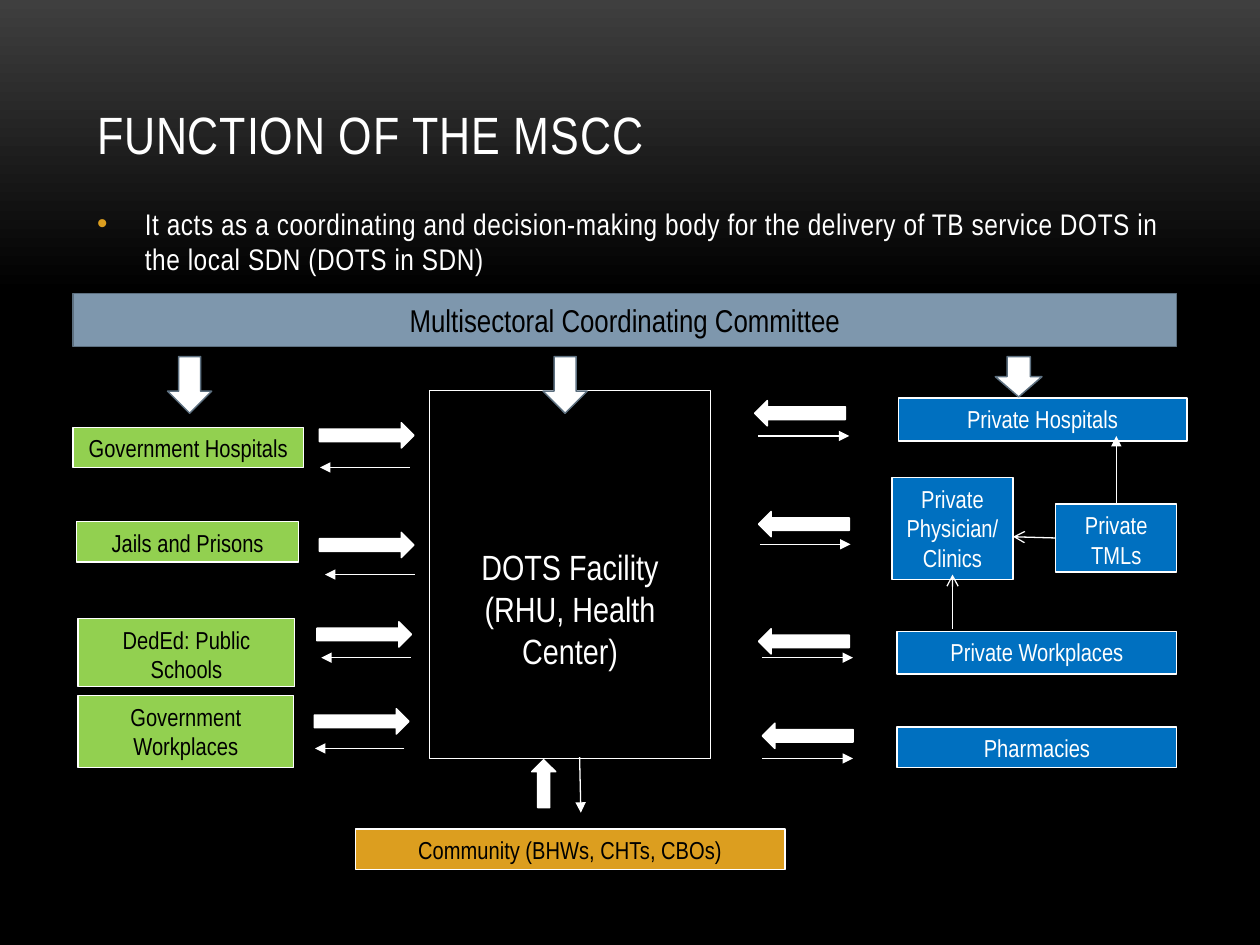
from copy import deepcopy

from lxml import etree
from pptx import Presentation
from pptx import util as u
from pptx.dml import color
from pptx.enum import shapes, text
from pptx.oxml import ns

COLS, ROWS = 100, 75
WIDE, HIGH = u.Inches(10), u.Inches(7.5)
FONT = "Arial Narrow"
WHITE, BLACK, GOLD = "FFFFFF", "000000", "DC9E1F"
GREEN, BLUE, STEEL, EDGE = "92D050", "0070C0", "7E97AD", "5D7080"
FORM = shapes.MSO_SHAPE


def rgb(code):
    """Turn a hex string into a colour."""
    return color.RGBColor.from_string(code)


def spot(box, x, y):
    """Turn a grid point within a box into slide lengths."""
    return round((box[0] + x) * WIDE / COLS), round((box[1] + y) * HIGH / ROWS)


def span(w, h):
    """Turn columns and rows into a width and a height."""
    return spot((0, 0), w, h)


def style(frame, size, tone, gap=None):
    """Format every run of a text frame."""
    for para in frame.paragraphs:
        for run in para.runs:
            run.font.size, run.font.name = u.Pt(size), FONT
            run.font.color.rgb = rgb(tone)
            if gap:
                run.font._element.set("spc", str(gap))


def form(slide, kind, box, part, fill, edge=WHITE, thick=0.85):
    """Draw a preset shape at a grid part of a box."""
    shape = slide.shapes.add_shape(kind, *spot(box, *part[:2]), *span(*part[2:]))
    shape.shadow.inherit = False
    if fill:
        shape.fill.solid()
        shape.fill.fore_color.rgb = rgb(fill)
    else:
        shape.fill.background()
    shape.line.color.rgb = rgb(edge)
    shape.line.width = u.Pt(thick)
    return shape


def label(slide, box, part, words, fill, tone, size=14, **look):
    """Draw a rectangle with centred words."""
    shape = form(slide, FORM.RECTANGLE, box, part, fill, **{"thick": 0.75, **look})
    frame = shape.text_frame
    frame.text, frame.word_wrap = words, True
    frame.vertical_anchor = text.MSO_ANCHOR.TOP
    for para in frame.paragraphs:
        para.alignment = text.PP_ALIGN.CENTER
    style(frame, size, tone)
    return shape


def link(slide, box, start, end, tip="triangle"):
    """Draw a thin line with an arrowhead at its end."""
    line = slide.shapes.add_connector(
        shapes.MSO_CONNECTOR.STRAIGHT, *spot(box, *start), *spot(box, *end))
    line.line.color.rgb = rgb(WHITE)
    line.line.width = u.Pt(0.75)
    etree.SubElement(line.line._get_or_add_ln(), ns.qn("a:tailEnd"), type=tip)
    etree.SubElement(line._element.spPr, ns.qn("a:effectLst"))
    return line


def pair(slide, box, block, turn, start, reach):
    """Draw a block arrow with a thin arrow going back."""
    arrow = form(slide, FORM.DOWN_ARROW, box, block, WHITE)
    arrow.rotation = turn
    link(slide, box, start, (start[0] + reach, start[1]))


def shade(slide):
    """Fill the background with a fade from grey to black."""
    fill = slide.background.fill
    fill.gradient()
    fill.gradient_angle = 270
    for stop, place, tone in zip(fill.gradient_stops, (0, 0.31), ("3F3F3F", BLACK)):
        stop.position, stop.color.rgb = place, rgb(tone)
    last = slide._element.findall(".//" + ns.qn("a:gs"))[-1]
    last.addnext(deepcopy(last))
    fill.gradient_stops[-1].position = 1


def holder(shape, box, words, size, gap, anchor):
    """Move a placeholder into a box and set its words."""
    shape.left, shape.top = spot(box, 0, 0)
    shape.width, shape.height = span(*box[2:])
    frame = shape.text_frame
    frame.text, frame.word_wrap = words, True
    frame.auto_size = text.MSO_AUTO_SIZE.NONE
    frame.vertical_anchor = anchor
    style(frame, size, WHITE, gap)
    para = frame.paragraphs[0]
    para.alignment = text.PP_ALIGN.LEFT
    return para


def head(slide, box):
    """Place the title."""
    holder(slide.shapes.title, box, "FUNCTION OF THE MSCC", 30, 50,
           text.MSO_ANCHOR.BOTTOM)


def lead(slide, box):
    """Place the bulleted lead sentence."""
    para = holder(
        slide.placeholders[1], box,
        "It acts as a coordinating and decision-making body for the delivery of "
        "TB service DOTS in the local SDN (DOTS in SDN)",
        17, 30, text.MSO_ANCHOR.TOP)
    props = para._p.get_or_add_pPr()
    props.set("marL", str(u.Inches(0.38)))
    props.set("indent", str(-u.Inches(0.38)))
    tint = etree.SubElement(props, ns.qn("a:buClr"))
    etree.SubElement(tint, ns.qn("a:srgbClr"), val=GOLD)
    etree.SubElement(props, ns.qn("a:buChar"), char="•")
    para.space_before, para.space_after = u.Pt(0), u.Pt(6)


def crown(slide, box):
    """Place the committee bar and the arrows below it."""
    bar = label(slide, box, (0, 0, box[2], 4.2), "Multisectoral Coordinating Committee",
                STEEL, BLACK, 18, edge=EDGE, thick=0.85)
    bar.text_frame.vertical_anchor = text.MSO_ANCHOR.MIDDLE
    for x, w, h in ((7.5, 3.5, 4.5), (37.3, 3.5, 4.5), (73.2, 3.7, 3.2)):
        form(slide, FORM.DOWN_ARROW, box, (x, 5, w, h), WHITE, EDGE)


def hub(slide, box):
    """Place the central facility."""
    core = label(slide, box, (0, 0, *box[2:]), "DOTS Facility\n(RHU, Health Center)",
                 None, WHITE, 20)
    core.text_frame.margin_top = span(0, 12.3)[1]


def state(slide, box):
    """Place the public partners and their arrows."""
    parts = (
        ("Government Hospitals", (0, 0, 18.3, 3.2), (22.3, -3.1), (26.7, 3.2)),
        ("Jails and Prisons", (0.3, 7.5, 17.6, 3.2), (22.3, 5.6), (27.1, 11.7)),
        ("DedEd: Public Schools", (0.4, 15.2, 17.2, 5.4), (22.1, 12.7), (26.8, 18.3)),
        ("Government Workplaces", (0.4, 21.3, 17.1, 5.7), (21.9, 19.6), (26.3, 25.5)),
    )
    for words, part, block, start in parts:
        label(slide, box, part, words, GREEN, BLACK)
        pair(slide, box, (*block, 2, 7.5), 270, start, -7.1)


def trade(slide, box):
    """Place the private partners and the links among them."""
    parts = (
        ("Private Hospitals", (11.1, 0, 22.9, 3.4)),
        ("Private Physician/ Clinics", (10.6, 6.3, 9.6, 8.1)),
        ("Private Workplaces", (11, 18.5, 22.2, 3.4)),
        ("Pharmacies", (11, 26.1, 22.2, 3.2)),
        ("Private TMLs", (23.6, 8.4, 9.6, 5.4)),
    )
    for words, part in parts:
        lab = label(slide, box, part, words, BLUE, WHITE)
    rows = ((2.3, -2.4, 0, 3), (2.6, 6.4, 0.1, 11.6),
            (2.6, 15.7, 0.3, 20.6), (2.9, 23.2, 0.3, 28.6))
    for x, y, left, low in rows:
        pair(slide, box, (x, y, 2, 7.2), 90, (left, low), 7.2)
    link(slide, box, (28.4, 8.4), (28.4, 3)).begin_connect(lab, 0)
    link(slide, box, (23.6, 11.1), (20.2, 11), "arrow").begin_connect(lab, 1)
    link(slide, box, (15.4, 18.3), (15.4, 14), "arrow")


def base(slide, box):
    """Place the community bar and its two arrows."""
    label(slide, box, (0, 5.7, box[2], 3.2), "Community (BHWs, CHTs, CBOs)", GOLD, BLACK)
    form(slide, FORM.UP_ARROW, box, (14, 0.2, 1.9, 3.8), WHITE)
    link(slide, box, (17.8, 0), (17.9, 4.4))


def main():
    """Build and save the slide."""
    deck = Presentation()
    deck.slide_width, deck.slide_height = WIDE, HIGH
    slide = deck.slides.add_slide(deck.slide_layouts[1])
    shade(slide)
    head(slide, (6.7, 1.1, 86.7, 12.5))
    lead(slide, (6.7, 15.8, 86.7, 7.5))
    hub(slide, (34.1, 31, 22.3, 29.2))
    state(slide, (5.8, 33.9, 27.1, 27))
    trade(slide, (60.2, 31.6, 34, 29.3))
    base(slide, (28.2, 60.1, 34.1, 8.9))
    crown(slide, (5.8, 23.3, 87.6, 9.5))
    deck.save("out.pptx")


if __name__ == "__main__":
    main()
